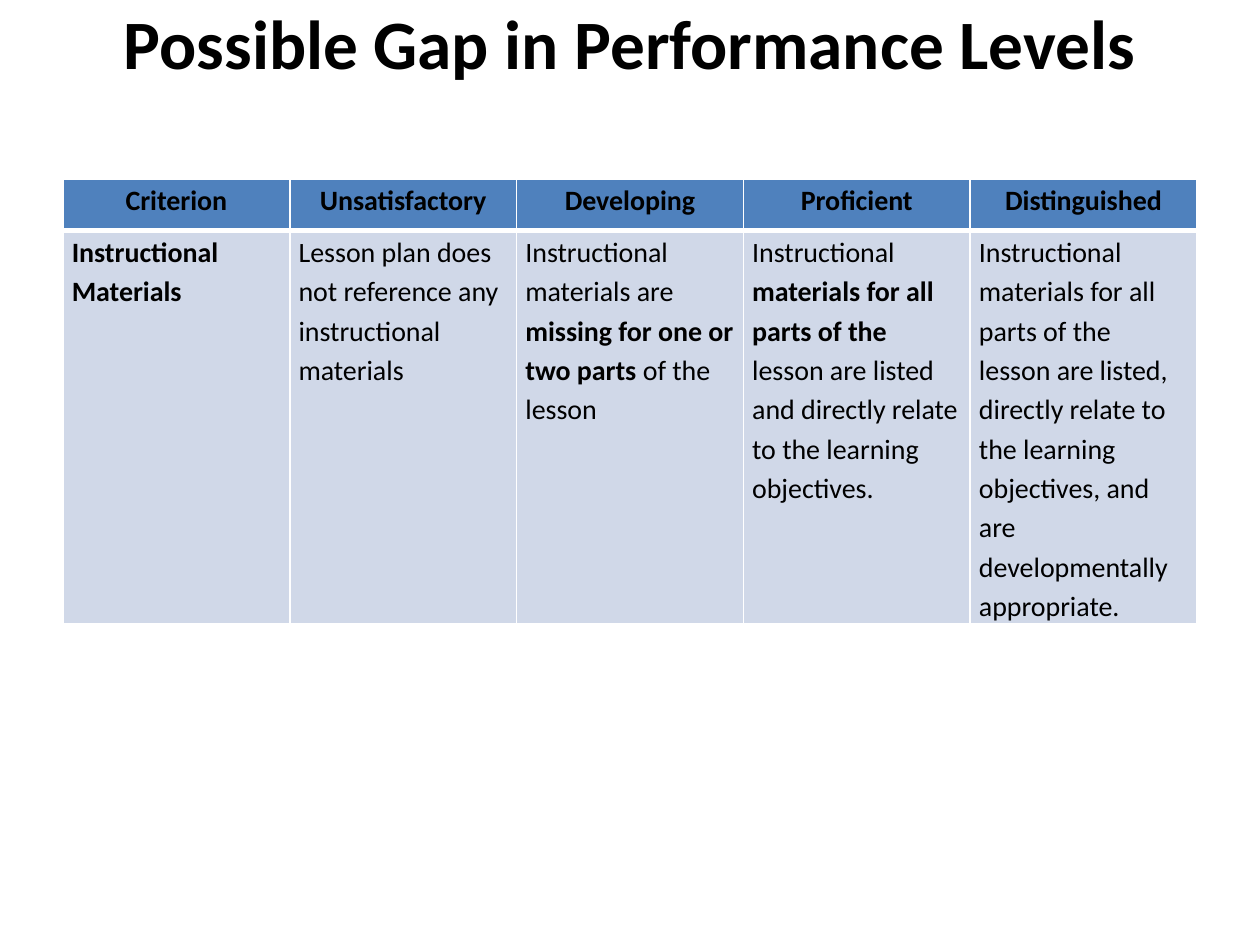
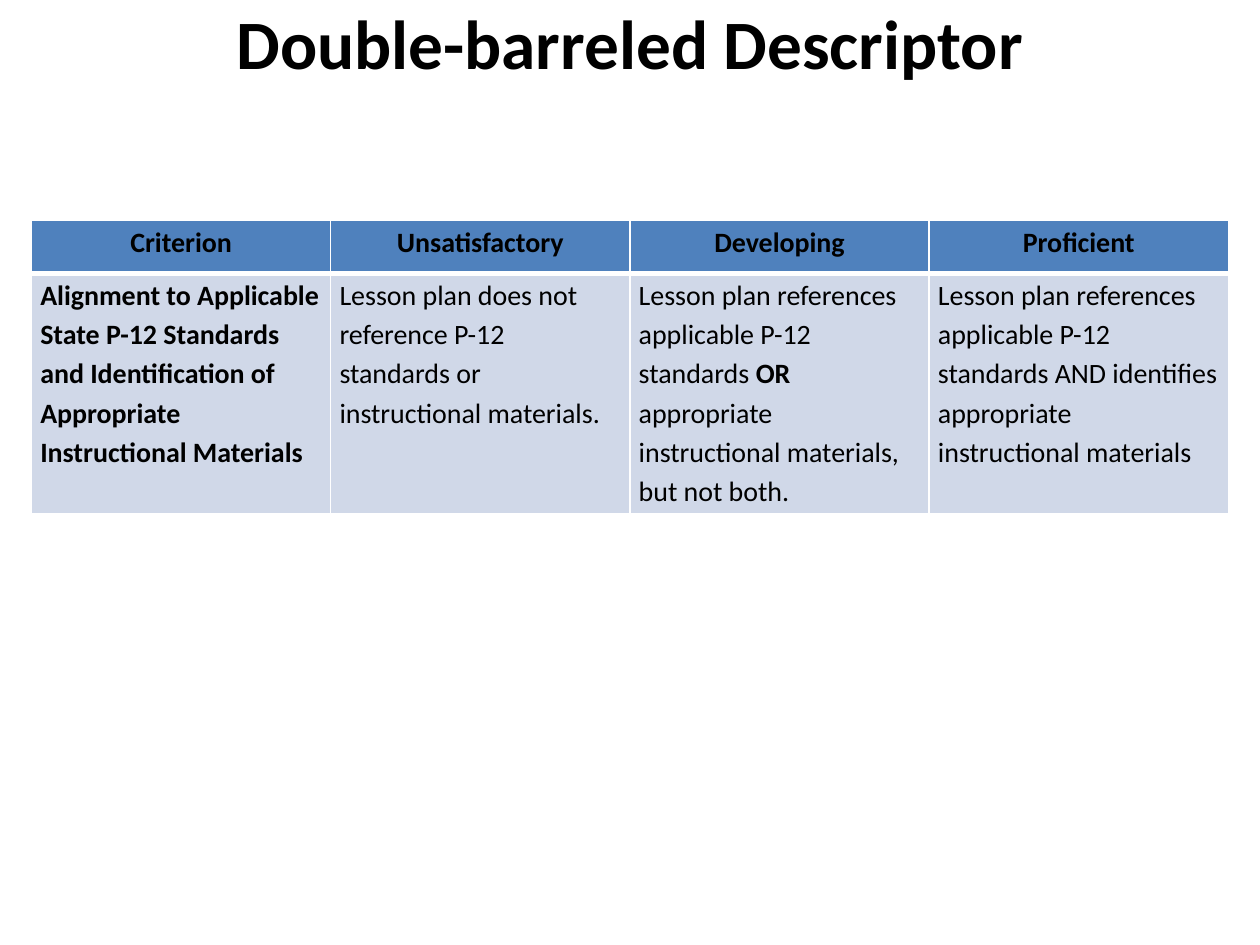
from dataclasses import dataclass

from lxml import etree
from pptx import Presentation
from pptx import util as u
from pptx.dml.color import RGBColor
from pptx.enum import text
from pptx.oxml.ns import qn

# Content: "**" switches bold on and off inside a cell
LEVELS = ["Criterion", "Unsatisfactory", "Developing", "Proficient", "Distinguished"]

RUBRICS = [
    {
        "title": "Possible Gap in Performance Levels",
        "left": 0.5, "top": 1.42, "heights": (0.41, 3.04),
        "descriptors": [
            "**Instructional Materials**",
            "Lesson plan does not reference any instructional materials",
            "Instructional materials are **missing for one or two parts** of the lesson",
            "Instructional **materials for all parts of the **lesson are listed and "
            "directly relate to the learning objectives.",
            "Instructional materials for all parts of the lesson are listed, directly "
            "relate to the learning objectives, and are developmentally appropriate.",
        ],
    },
    {
        "title": "Double-barreled Descriptor",
        "left": 0.25, "top": 1.75, "heights": (0.42, 1.91),
        "descriptors": [
            "**Alignment to Applicable State P-12 Standards and Identification of "
            "Appropriate Instructional Materials**",
            "Lesson plan does not reference P-12 standards or instructional materials.",
            "Lesson plan references applicable P-12 standards **OR** appropriate "
            "instructional materials, but not both.",
            "Lesson plan references applicable P-12 standards AND identifies "
            "appropriate instructional materials",
        ],
    },
]


@dataclass(frozen=True)
class Theme:
    font: str = "Calibri"
    ink: str = "000000"
    header: str = "4F81BD"
    body: str = "D0D8E8"
    rule: str = "FFFFFF"
    title_size: float = 39.6
    cell_size: float = 16
    line_spacing: float = 1.15
    cell_margin: float = 0.07
    thin: float = 1
    thick: float = 3


THEME = Theme()
WIDTH, HEIGHT = 10, 7.5
TITLE_LEFT, TITLE_HEIGHT = 0.5, 0.58


def style_font(font, size, bold):
    font.name, font.size, font.bold = THEME.font, u.Pt(size), bold
    font.color.rgb = RGBColor.from_string(THEME.ink)


def add_title(slide, wording):
    title = slide.shapes.title
    title.left, title.top = u.Inches(TITLE_LEFT), 0
    title.width, title.height = u.Inches(WIDTH - 2 * TITLE_LEFT), u.Inches(TITLE_HEIGHT)
    frame = title.text_frame
    frame.text = wording
    frame.auto_size = text.MSO_AUTO_SIZE.NONE
    frame.vertical_anchor = text.MSO_ANCHOR.TOP
    frame.margin_top = frame.margin_bottom = 0
    frame.paragraphs[0].alignment = text.PP_ALIGN.CENTER
    style_font(frame.paragraphs[0].runs[0].font, THEME.title_size, True)


def rule_cell(cell, is_header):
    """White rules all round, with the thick one between header and body."""
    thick_side = "lnB" if is_header else "lnT"
    properties = cell._tc.get_or_add_tcPr()
    for side in ("lnL", "lnR", "lnT", "lnB"):
        weight = THEME.thick if side == thick_side else THEME.thin
        line = etree.SubElement(properties, qn(f"a:{side}"), w=str(u.Pt(weight)))
        fill = etree.SubElement(line, qn("a:solidFill"))
        etree.SubElement(fill, qn("a:srgbClr"), val=THEME.rule)


def fill_cell(cell, wording, is_header):
    rule_cell(cell, is_header)
    cell.fill.solid()
    cell.fill.fore_color.rgb = RGBColor.from_string(THEME.header if is_header else THEME.body)
    cell.margin_left = cell.margin_right = u.Inches(THEME.cell_margin)
    cell.margin_top = cell.margin_bottom = 0
    paragraph = cell.text_frame.paragraphs[0]
    paragraph.line_spacing = THEME.line_spacing
    paragraph.alignment = text.PP_ALIGN.CENTER if is_header else text.PP_ALIGN.LEFT
    for index, part in enumerate(wording.split("**")):
        if part:
            run = paragraph.add_run()
            run.text = part
            style_font(run.font, THEME.cell_size, is_header or index % 2 == 1)


def add_rubric(slide, rubric):
    descriptors, heights = rubric["descriptors"], rubric["heights"]
    rows = [LEVELS[:len(descriptors)], descriptors]
    table = slide.shapes.add_table(
        len(rows), len(descriptors), u.Inches(rubric["left"]), u.Inches(rubric["top"]),
        u.Inches(WIDTH - 2 * rubric["left"]), u.Inches(sum(heights))).table
    for r, wordings in enumerate(rows):
        table.rows[r].height = u.Inches(heights[r])
        for c, wording in enumerate(wordings):
            fill_cell(table.cell(r, c), wording, is_header=r == 0)


def main():
    deck = Presentation()
    deck.slide_width, deck.slide_height = u.Inches(WIDTH), u.Inches(HEIGHT)
    title_only = deck.slide_layouts[5]
    for rubric in RUBRICS:
        slide = deck.slides.add_slide(title_only)
        add_title(slide, rubric["title"])
        add_rubric(slide, rubric)
    deck.save("out.pptx")


if __name__ == "__main__":
    main()
